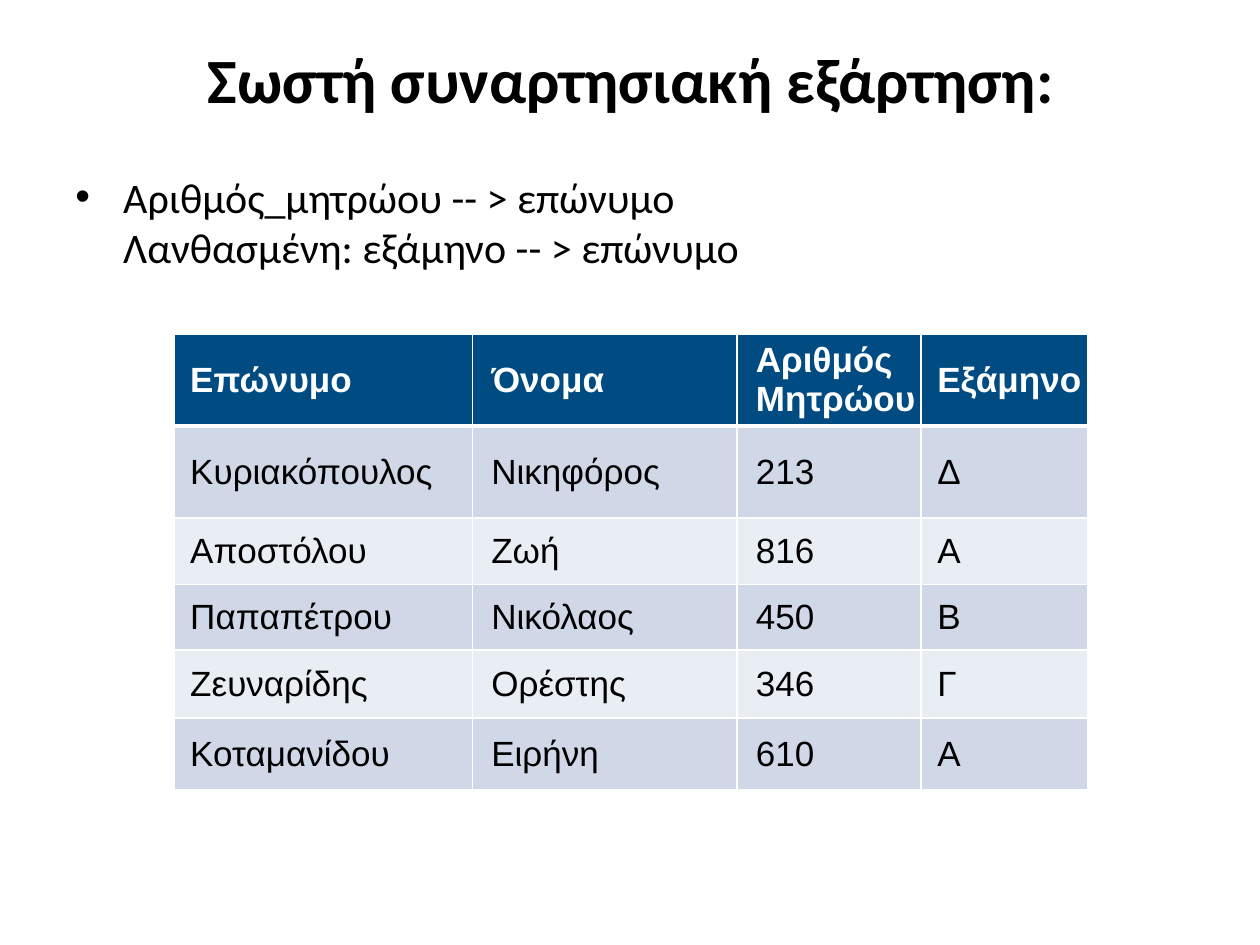
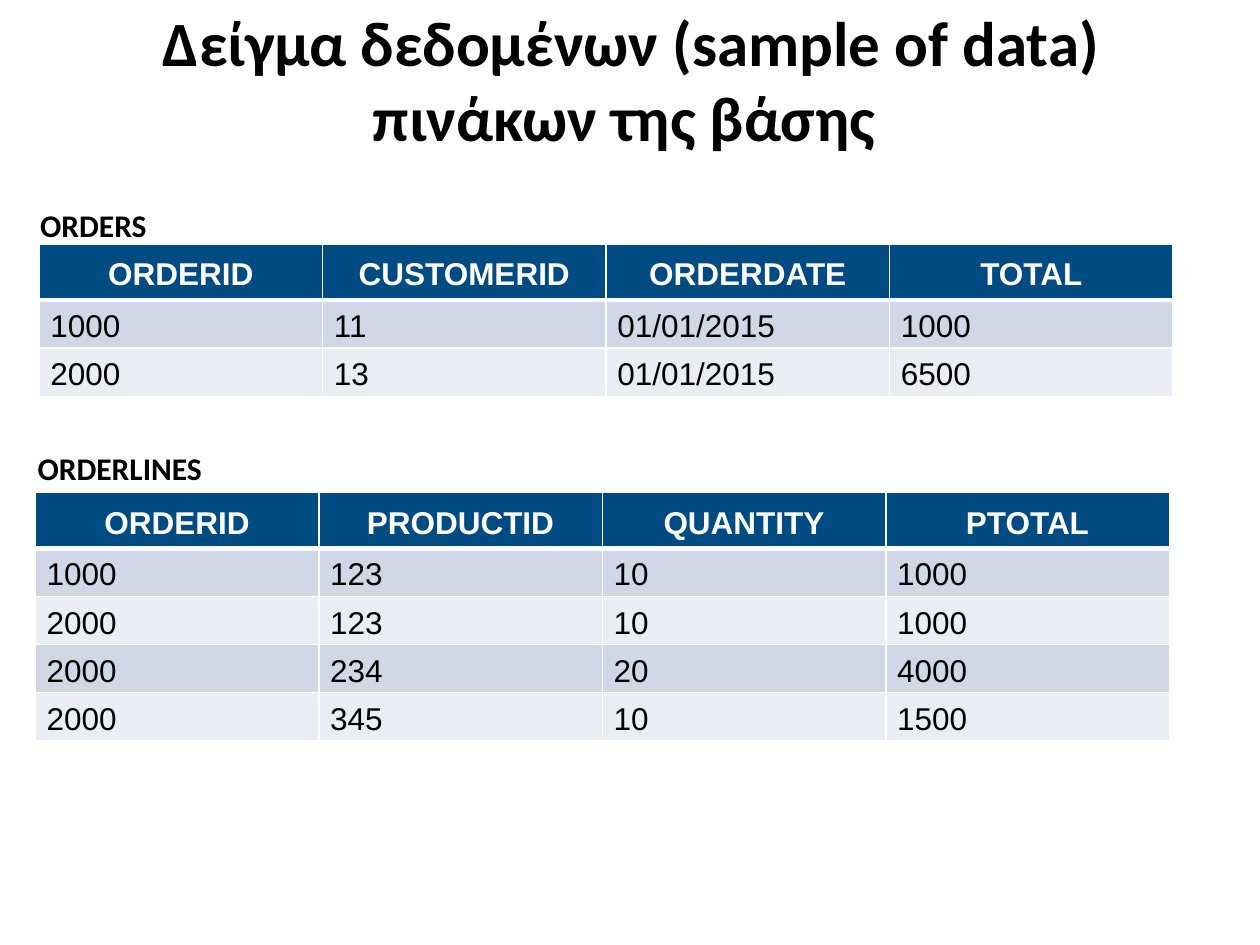
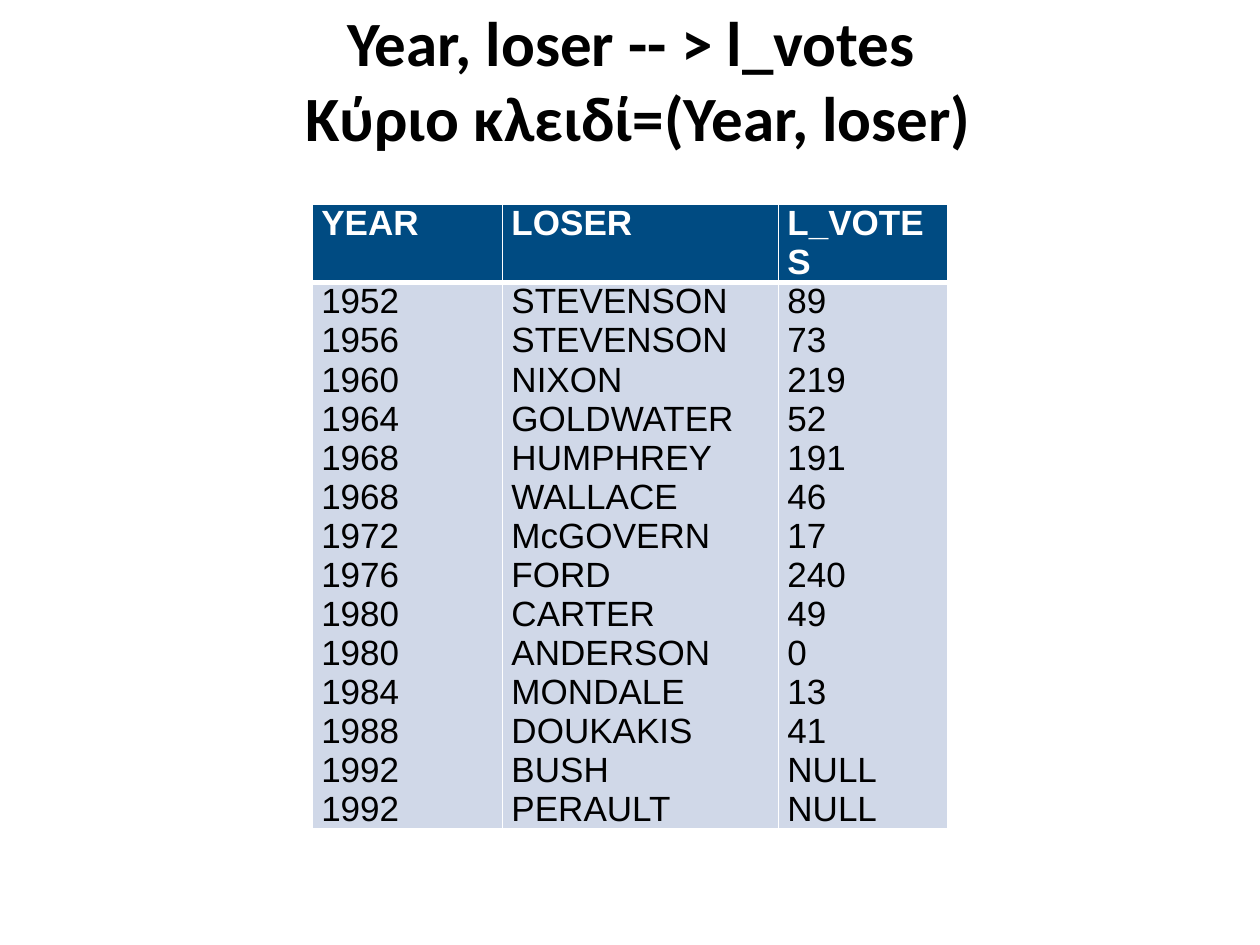
from dataclasses import dataclass

from lxml.etree import SubElement
from pptx import Presentation
from pptx.dml.color import RGBColor
from pptx.enum.text import MSO_ANCHOR, MSO_AUTO_SIZE, PP_ALIGN
from pptx.oxml import parse_xml
from pptx.oxml.ns import nsdecls, qn
from pptx.util import Emu, Inches, Pt

# Shared look
BLACK, WHITE, NAVY = "000000", "FFFFFF", "004B82"
BANDS = ("D0D8E8", "E9EDF4")
HEAD, BODY = "Calibri", "Arial"
THIN, THICK = 1, 3
COLS, ROWS = 100, 75  # the slide's grid, one unit is a tenth of an inch
TITLE = (5.1, 1.3, 90, 9.9)


@dataclass(frozen=True)
class Style:
    """How one kind of table row sets its text; pad is left, top, right, bottom."""
    pad: tuple
    anchor: MSO_ANCHOR = MSO_ANCHOR.MIDDLE
    align: PP_ALIGN = PP_ALIGN.LEFT
    size: int = 20
    lead: float | None = None
    after: int = 0


@dataclass(frozen=True)
class Sheet:
    left: float
    top: float
    cols: list
    rows: list
    cells: list
    head: Style
    body: Style
    dents: tuple = ()  # extra left padding of each column


def unit(num: float) -> Emu:
    return Inches(num * 10 / COLS)


def tint(code: str) -> RGBColor:
    return RGBColor.from_string(code)


def put(frame, text: str, *, size: float, font: str = HEAD, color: str = BLACK,
        bold: bool = False, align: PP_ALIGN = PP_ALIGN.LEFT,
        lead: float | None = None, before: float = 0, after: float = 0,
        bullet: float = 0) -> None:
    """Write text: a newline starts a paragraph, a vertical tab breaks a line."""
    frame.text = text
    frame.word_wrap = True
    for para in frame.paragraphs:
        para.alignment = align
        para.line_spacing = lead
        para.space_before, para.space_after = Pt(before), Pt(after)
        for run in para.runs:
            run.font.size, run.font.name = Pt(size), font
            run.font.bold, run.font.color.rgb = bold, tint(color)
        if bullet:
            props = para._p.get_or_add_pPr()
            props.set("marL", str(unit(bullet)))
            props.set("indent", str(-unit(bullet)))
            SubElement(props, qn("a:buFont"), typeface=BODY)
            SubElement(props, qn("a:buChar"), char="•")


def page(deck, title: str):
    slide = deck.slides.add_slide(deck.slide_layouts[5])
    head = slide.shapes.title
    head.left, head.top, head.width, head.height = map(unit, TITLE)
    frame = head.text_frame
    put(frame, title, size=36, bold=True, align=PP_ALIGN.CENTER)
    frame.auto_size = MSO_AUTO_SIZE.NONE
    frame.vertical_anchor = MSO_ANCHOR.MIDDLE
    return slide


def note(slide, text: str, area: tuple, anchor: MSO_ANCHOR = MSO_ANCHOR.TOP,
         **form) -> None:
    frame = slide.shapes.add_textbox(*map(unit, area)).text_frame
    put(frame, text, **form)
    frame.vertical_anchor = anchor


def edge(cell, top: int, base: int) -> None:
    """Give a cell white borders; they precede the fill in its XML."""
    props = cell._tc.get_or_add_tcPr()
    sides = (("L", THIN), ("R", THIN), ("T", top), ("B", base))
    for spot, (side, width) in enumerate(sides):
        props.insert(spot, parse_xml(
            f'<a:ln{side} {nsdecls("a")} w="{Pt(width)}"><a:solidFill>'
            f'<a:srgbClr val="{WHITE}"/></a:solidFill></a:ln{side}>'))


def draw(slide, sheet: Sheet) -> None:
    area = (sheet.left, sheet.top, sum(sheet.cols), sum(sheet.rows))
    table = slide.shapes.add_table(len(sheet.rows), len(sheet.cols),
                                   *map(unit, area)).table
    for col, width in zip(table.columns, sheet.cols):
        col.width = unit(width)
    for row, height in zip(table.rows, sheet.rows):
        row.height = unit(height)
    dents = sheet.dents or (0,) * len(sheet.cols)
    for i, texts in enumerate(sheet.cells):
        first = i == 0
        style = sheet.head if first else sheet.body
        left, top, right, base = style.pad
        for j, text in enumerate(texts):
            cell = table.cell(i, j)
            put(cell.text_frame, text, size=style.size, font=BODY, bold=first,
                color=WHITE if first else BLACK, align=style.align,
                lead=style.lead, after=style.after)
            cell.vertical_anchor = style.anchor
            cell.margin_left, cell.margin_right = unit(left + dents[j]), unit(right)
            cell.margin_top, cell.margin_bottom = unit(top), unit(base)
            cell.fill.solid()
            cell.fill.fore_color.rgb = tint(NAVY if first else BANDS[(i - 1) % 2])
            edge(cell, THICK if i == 1 else THIN, THICK if first else THIN)


# Table styles
NAMES = Style((0.1, 0, 0.1, 0))
KEYS = Style((0.9, 0.6, 0.9, 0.6), MSO_ANCHOR.BOTTOM, PP_ALIGN.CENTER, 18, 1.15, 10)
DATA = Style((0.9, 0.3, 0.9, 0.3), size=18, lead=1.15, after=10)
VOTES = Style((0.7, 0, 0.7, 0), MSO_ANCHOR.TOP, PP_ALIGN.JUSTIFY)

# Table contents
PUPILS = [
    ("Επώνυμο", "Όνομα", "Αριθμός Μητρώου", "Εξάμηνο"),
    ("Κυριακόπουλος", "Νικηφόρος", "213", "Δ"),
    ("Αποστόλου", "Ζωή", "816", "A"),
    ("Παπαπέτρου", "Νικόλαος", "450", "Β"),
    ("Ζευναρίδης", "Ορέστης", "346", "Γ"),
    ("Κοταμανίδου", "Ειρήνη", "610", "A"),
]
ORDERS = [
    ("ORDERID", "CUSTOMERID", "ORDERDATE", "TOTAL"),
    ("1000", "11", "01/01/2015", "1000"),
    ("2000", "13", "01/01/2015", "6500"),
]
LINES = [
    ("ORDERID", "PRODUCTID", "QUANTITY", "PTOTAL"),
    ("1000", "123", "10", "1000"),
    ("2000", "123", "10", "1000"),
    ("2000", "234", "20", "4000"),
    ("2000", "345", "10", "1500"),
]
LOSERS = [
    ("1952", "STEVENSON", "89"), ("1956", "STEVENSON", "73"),
    ("1960", "NIXON", "219"), ("1964", "GOLDWATER", "52"),
    ("1968", "HUMPHREY", "191"), ("1968", "WALLACE", "46"),
    ("1972", "McGOVERN", "17"), ("1976", "FORD", "240"),
    ("1980", "CARTER", "49"), ("1980", "ANDERSON", "0"),
    ("1984", "MONDALE", "13"), ("1988", "DOUKAKIS", "41"),
    ("1992", "BUSH", "NULL"), ("1992", "PERAULT", "NULL"),
]


def rule(deck) -> None:
    slide = page(deck, "Σωστή συναρτησιακή εξάρτηση:")
    note(slide, "Αριθμός_μητρώου -- > επώνυμο\vΛανθασμένη: εξάμηνο -- > επώνυμο",
         (5, 13.1, 90, 11), size=24, before=4.8, bullet=3.8)
    draw(slide, Sheet(13.8, 26.5, [23.7, 21, 14.6, 13.2],
                      [7.3, 7.3, 5.3, 5.2, 5.4, 5.7], PUPILS,
                      NAMES, NAMES, (1.2, 1.4, 1.4, 1.2)))


def sample(deck) -> None:
    slide = page(deck, "Δείγμα δεδομένων (sample of data) πινάκων της βάσης ")
    for left, top, cells in ((3.1, 19.4, ORDERS), (2.8, 39.1, LINES)):
        rows = [4.4] + [3.8] * (len(cells) - 1)
        draw(slide, Sheet(left, top, [22.5] * 4, rows, cells, KEYS, DATA))
    for text, area in (("ORDERLINES", (2, 32, 50, 7.1)),
                       ("ORDERS", (2.2, 13.9, 14, 5.9))):
        note(slide, text, area, MSO_ANCHOR.BOTTOM, size=18, bold=True)


def votes(deck) -> None:
    slide = page(deck, "Year, loser -- > l_votes\v Κύριο κλειδί=(Year, loser)")
    cells = [("YEAR", "LOSER", "L_VOTES"),
             tuple("\n".join(col) for col in zip(*LOSERS))]
    draw(slide, Sheet(24.8, 16.2, [15.1, 21.9, 13.4], [6.2, 43.3], cells,
                      VOTES, VOTES))


def main() -> None:
    deck = Presentation()
    deck.slide_width, deck.slide_height = unit(COLS), unit(ROWS)
    for build in (rule, sample, votes):
        build(deck)
    deck.save("out.pptx")


if __name__ == "__main__":
    main()
